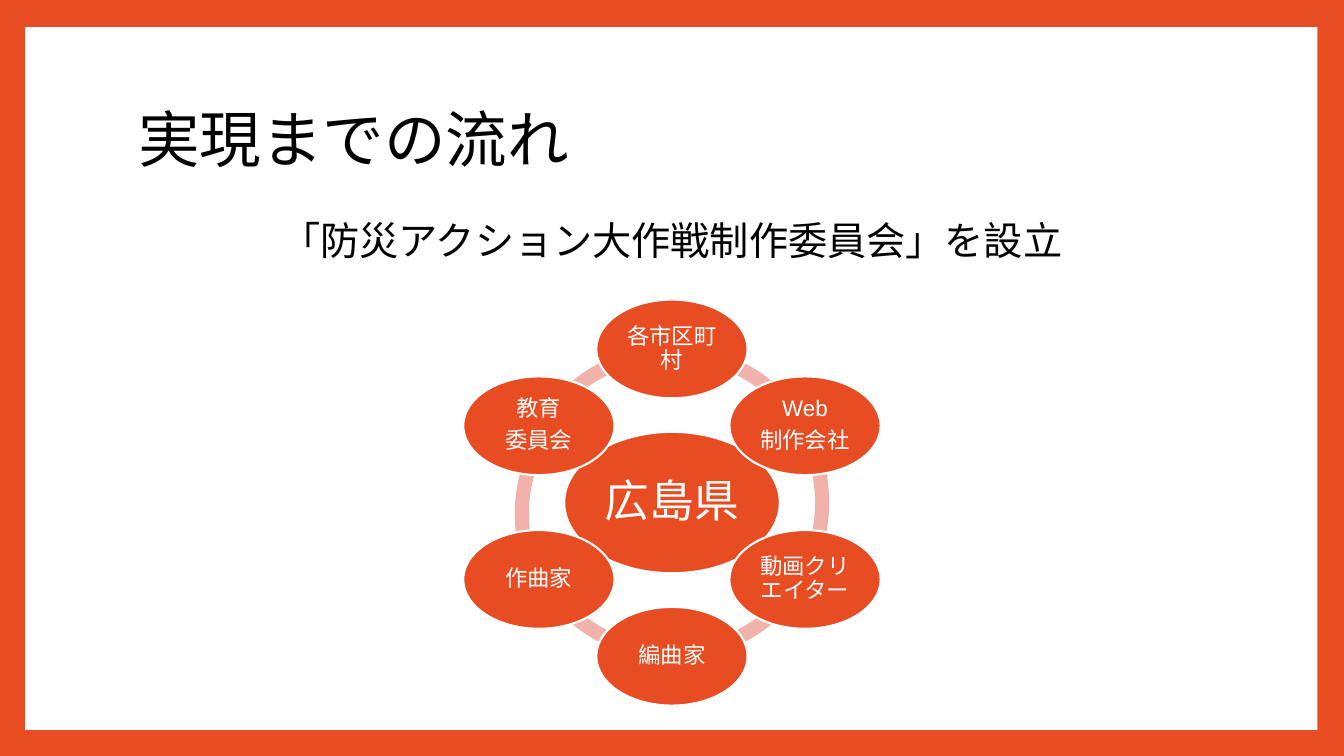
from math import cos, radians, sin

from pptx import Presentation
from pptx.dml.color import RGBColor
from pptx.enum.shapes import MSO_SHAPE as Shape
from pptx.enum.text import MSO_ANCHOR as Anchor, MSO_AUTO_SIZE as AutoSize, PP_ALIGN as Align
from pptx.util import Pt

ORANGE, PINK, WHITE, BLACK = "E84C22", "F2B2AC", "FFFFFF", "000000"
FONT = "Arial"
MEMBERS = ["各市区町村", "Web\n制作会社", "動画クリエイター", "編曲家", "作曲家", "教育\n委員会"]
# Start angle, end angle (clockwise from the right), downward shift
RING_ARCS = [(126, 162, 0), (90, 126, 0), (54, 90, 0), (18, 54, 0), (198, 18, 0), (162, 198, 8)]


def paint(fill, color):
    fill.solid()
    fill.fore_color.rgb = RGBColor.from_string(color)


def write(frame, text, size, color, align, line_spacing=1.0):
    """Fill the frame with one paragraph per line of text."""
    frame.word_wrap = True
    frame.text = text
    for index, para in enumerate(frame.paragraphs):
        para.alignment = align
        para.line_spacing = line_spacing
        para.space_before = Pt(size * 0.35 if index else 0)
        para.font.name = FONT
        para.font.size = Pt(size)
        paint(para.font.fill, color)


def add_plain_shape(slide, kind, left, top, width, height, color):
    shape = slide.shapes.add_shape(kind, Pt(left), Pt(top), Pt(width), Pt(height))
    shape.shadow.inherit = False
    paint(shape.fill, color)
    shape.line.fill.background()
    return shape


def add_frame(slide, left, top, width, height):
    """Colour the slide and lay a white panel behind the title."""
    paint(slide.background.fill, ORANGE)
    panel = add_plain_shape(slide, Shape.RECTANGLE, left, top, width, height, WHITE)
    slide.shapes.title.element.addprevious(panel.element)


def add_title(slide, text, left, top, width, height):
    title = slide.shapes.title
    title.left, title.top, title.width, title.height = map(Pt, (left, top, width, height))
    write(title.text_frame, text, 44, BLACK, Align.LEFT, 0.9)
    title.text_frame.auto_size = AutoSize.NONE
    title.text_frame.vertical_anchor = Anchor.MIDDLE


def add_subtitle(slide, text, left, top, width, height):
    box = slide.shapes.add_textbox(Pt(left), Pt(top), Pt(width), Pt(height))
    write(box.text_frame, text, 28, BLACK, Align.CENTER)


def add_oval(slide, text, center_x, center_y, width, height, size, inset):
    oval = add_plain_shape(slide, Shape.OVAL, center_x - width / 2, center_y - height / 2,
                           width, height, ORANGE)
    paint(oval.line.fill, WHITE)
    oval.line.width = Pt(1.5)
    frame = oval.text_frame
    frame.margin_left = frame.margin_right = frame.margin_top = frame.margin_bottom = Pt(inset)
    frame.vertical_anchor = Anchor.MIDDLE
    write(frame, text, size, WHITE, Align.CENTER, 0.9)


def add_committee(slide, left, top, width, height):
    """Draw the hub, its ring and the members spaced evenly around it."""
    member_width, member_height, ring = 108, 70.5, 224.6
    center_x, center_y = left + width / 2, top + height / 2
    orbit = (height - member_height) / 2

    for start, end, shift in RING_ARCS:
        arc = add_plain_shape(slide, Shape.BLOCK_ARC, center_x - ring / 2,
                              center_y - ring / 2 + shift, ring, ring, PINK)
        # Angles are stored in 60000ths of a degree, adjustments in 100000ths
        arc.adjustments[0] = start * 0.6
        arc.adjustments[1] = end * 0.6
        arc.adjustments[2] = 0.045

    add_oval(slide, "広島県", center_x, center_y, 154, 101, 32, 2.9)
    for index, member in enumerate(MEMBERS):
        angle = radians(index * 360 / len(MEMBERS) - 90)
        add_oval(slide, member, center_x + orbit * cos(angle), center_y + orbit * sin(angle),
                 member_width, member_height, 16, 1.44)


def main():
    deck = Presentation()
    deck.slide_width, deck.slide_height = Pt(960), Pt(540)
    slide = deck.slides.add_slide(deck.slide_layouts[5])
    add_frame(slide, 18, 19.4, 923, 502)
    add_title(slide, "実現までの流れ", 91.4, 74.2, 777.6, 55.4)
    add_committee(slide, 331, 214, 298, 290)
    add_subtitle(slide, "「防災アクション大作戦制作委員会」を設立", 192.2, 151.2, 575.3, 41)
    deck.save("out.pptx")


if __name__ == "__main__":
    main()
